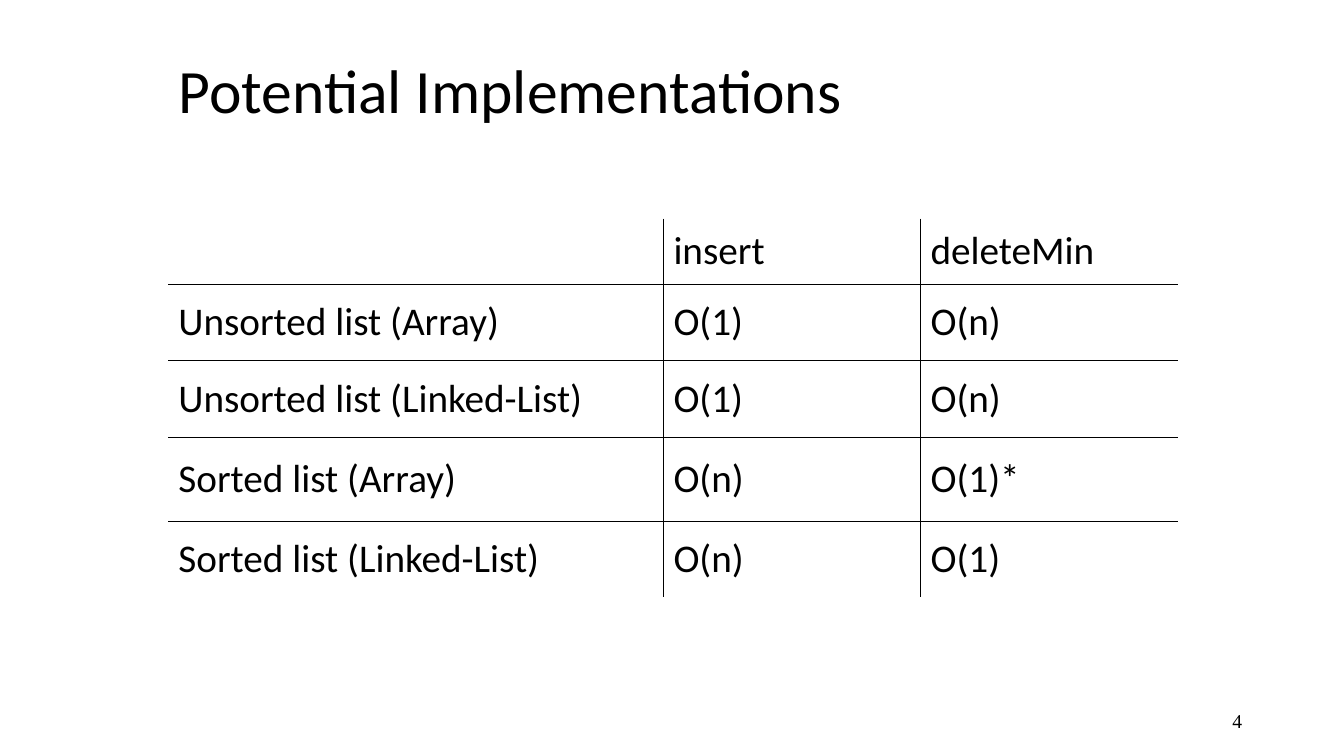
import pptx
import pptx.util
import pptx.dml.color
import pptx.enum.text
import pptx.oxml
import pptx.oxml.ns

Inches = pptx.util.Inches
Pt = pptx.util.Pt
ALIGN = pptx.enum.text.PP_ALIGN
MIDDLE = pptx.enum.text.MSO_ANCHOR.MIDDLE

# Content
TITLE = "Potential Implementations"
PAGE_NUMBER = "4"
COSTS = [
    ("", "insert", "deleteMin"),
    ("Unsorted list (Array)", "O(1)", "O(n)"),
    ("Unsorted list (Linked-List)", "O(1)", "O(n)"),
    ("Sorted list (Array)", "O(n)", "O(1)*"),
    ("Sorted list (Linked-List)", "O(n)", "O(1)"),
]
COLUMN_WIDTHS = [4.91, 2.55, 2.55]
ROW_HEIGHTS = [0.65, 0.76, 0.76, 0.83, 0.75]
COLORS = {"text": "000000", "rule": "000000"}


def write(frame, text, size, font="Calibri", align=ALIGN.LEFT, spacing=1.0):
    """Put one formatted paragraph into a text frame."""
    frame.word_wrap = True
    paragraph = frame.paragraphs[0]
    paragraph.alignment = align
    paragraph.line_spacing = spacing
    paragraph.space_before = Pt(0)
    run = paragraph.add_run()
    run.text = text
    run.font.size = Pt(size)
    run.font.name = font
    run.font.color.rgb = pptx.dml.color.RGBColor.from_string(COLORS["text"])


def set_borders(cell, visible):
    """Rule the sides marked True in visible and clear the others."""
    properties = cell._tc.get_or_add_tcPr()
    for index, side in enumerate("LRTB"):
        fill = (f'<a:solidFill><a:srgbClr val="{COLORS["rule"]}"/></a:solidFill>'
                if visible[side] else "<a:noFill/>")
        line = pptx.oxml.parse_xml(
            f'<a:ln{side} {pptx.oxml.ns.nsdecls("a")} w="{Pt(1)}">{fill}</a:ln{side}>')
        properties.insert(index, line)


presentation = pptx.Presentation()
presentation.slide_width = Inches(13.33)
presentation.slide_height = Inches(7.5)
slide = presentation.slides.add_slide(presentation.slide_layouts[5])

# Title
title = slide.shapes.title
title.left, title.top = Inches(1.67), Inches(0.12)
title.width, title.height = Inches(10.42), Inches(1.62)
title.text_frame.vertical_anchor = MIDDLE
write(title.text_frame, TITLE, 44, spacing=0.9)

# Table with inner rules only
table = slide.shapes.add_table(
    len(COSTS), len(COLUMN_WIDTHS), Inches(1.67), Inches(2.17),
    Inches(sum(COLUMN_WIDTHS)), Inches(sum(ROW_HEIGHTS))).table
table.first_row = False
table.horz_banding = False
for column, width in zip(table.columns, COLUMN_WIDTHS):
    column.width = Inches(width)
for row, height in zip(table.rows, ROW_HEIGHTS):
    row.height = Inches(height)

last_row, last_column = len(COSTS) - 1, len(COLUMN_WIDTHS) - 1
for r, values in enumerate(COSTS):
    for c, value in enumerate(values):
        cell = table.cell(r, c)
        cell.fill.background()
        cell.vertical_anchor = MIDDLE
        set_borders(cell, {"L": c > 0, "R": c < last_column,
                           "T": r > 0, "B": r < last_row})
        if value:
            write(cell.text_frame, value, 28)

# Page number
number = slide.shapes.add_textbox(Inches(9.42), Inches(6.95), Inches(3), Inches(0.4))
number.text_frame.vertical_anchor = MIDDLE
write(number.text_frame, PAGE_NUMBER, 14, font="Times New Roman", align=ALIGN.RIGHT)

presentation.save("out.pptx")
